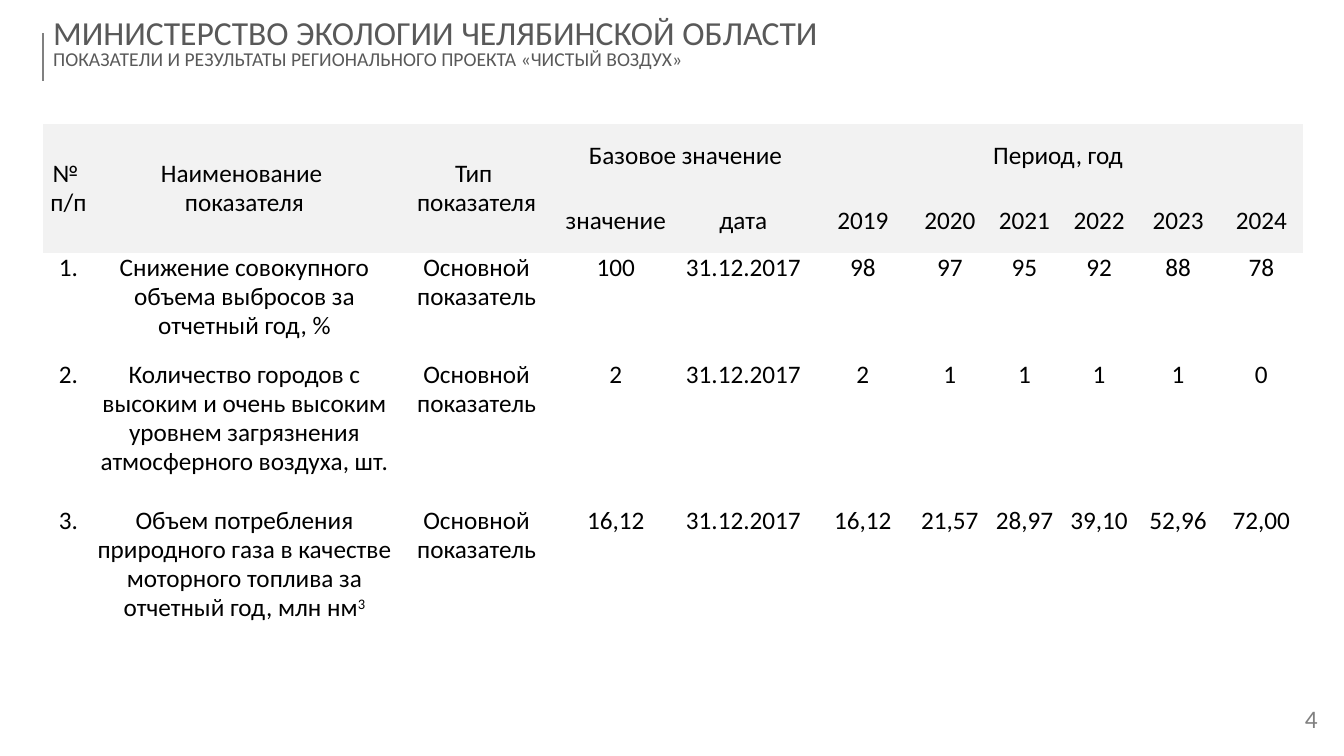
from pptx import Presentation, util as u
from pptx.dml.color import RGBColor
from pptx.enum import shapes, text
from lxml import etree


def rgb(value):
    return RGBColor.from_string(value)


def style(tf, sizes, color, align, spacing):
    for p, size in zip(tf.paragraphs, sizes):
        p.alignment = align
        p.line_spacing = spacing
        for r in p.runs:
            r.font.name = "Calibri"
            r.font.size = u.Pt(size)
            r.font.color.rgb = rgb(color)


CENTER, LEFT = text.PP_ALIGN.CENTER, text.PP_ALIGN.LEFT
MIDDLE, TOP = text.MSO_ANCHOR.MIDDLE, text.MSO_ANCHOR.TOP

prs = Presentation()
prs.slide_width, prs.slide_height = u.Cm(33.87), u.Cm(19.05)
s = prs.slides.add_slide(prs.slide_layouts[6])

rule = s.shapes.add_connector(shapes.MSO_CONNECTOR.STRAIGHT, u.Cm(1.09), u.Cm(0.84), u.Cm(1.09), u.Cm(2.03))
rule.line.color.rgb = rgb("808080")
rule.line.width = u.Pt(1.5)
etree.SubElement(rule._element.spPr, "{http://schemas.openxmlformats.org/drawingml/2006/main}effectLst")

labels = [
    ("МИНИСТЕРСТВО ЭКОЛОГИИ ЧЕЛЯБИНСКОЙ ОБЛАСТИ\n"
     "ПОКАЗАТЕЛИ И РЕЗУЛЬТАТЫ РЕГИОНАЛЬНОГО ПРОЕКТА «ЧИСТЫЙ ВОЗДУХ»",
     (1.09, 0.36, 30.96, 1.7), (24, 14), "595959", LEFT, TOP),
    ("4", (31.57, 17.53, 2.95, 1.27), (18,), "808080", CENTER, MIDDLE),
]
for words, box, sizes, color, align, anchor in labels:
    tf = s.shapes.add_textbox(*[u.Cm(v) for v in box]).text_frame
    tf.word_wrap = True
    tf.vertical_anchor = anchor
    tf.text = words
    style(tf, sizes, color, align, 0.8)

widths = [1.27, 7.6, 4.1, 2.92, 3.51, 2.51, 1.88, 1.88, 1.88, 2.1, 2.1]
heights = [1.63, 1.63, 2.69, 3.68, 3.68]
rows = [
    ["№ \nп/п", "Наименование \nпоказателя", "Тип \nпоказателя", "Базовое значение", "",
     "Период, год", "", "", "", "", ""],
    ["", "", "", "значение", "дата", "2019", "2020", "2021", "2022", "2023", "2024"],
    ["1.", "Снижение совокупного объема выбросов за отчетный год, %", "Основной показатель",
     "100", "31.12.2017", "98", "97", "95", "92", "88", "78"],
    ["2.", "Количество городов с высоким и очень высоким уровнем загрязнения атмосферного воздуха, шт.",
     "Основной показатель", "2", "31.12.2017", "2", "1", "1", "1", "1", "0"],
    ["3.", "Объем потребления природного газа в качестве моторного топлива за отчетный год, млн нм",
     "Основной показатель", "16,12", "31.12.2017", "16,12", "21,57", "28,97", "39,10", "52,96", "72,00"],
]
table = s.shapes.add_table(len(rows), len(widths), u.Cm(1.09), u.Cm(3.12),
                           u.Cm(sum(widths)), u.Cm(sum(heights))).table
table.first_row = table.horz_banding = False
NO_STYLE_NO_GRID = "{2D5ABB26-0587-4C30-8999-92F81FD0307C}"
table._tbl.tblPr[0].text = NO_STYLE_NO_GRID
for column, width in zip(table.columns, widths):
    column.width = u.Cm(width)
for row, height in zip(table.rows, heights):
    row.height = u.Cm(height)

for top, left, bottom, right in [(0, 0, 1, 0), (0, 1, 1, 1), (0, 2, 1, 2), (0, 3, 0, 4), (0, 5, 0, 10)]:
    table.cell(top, left).merge(table.cell(bottom, right))

for i, values in enumerate(rows):
    for j, value in enumerate(values):
        cell = table.cell(i, j)
        cell.margin_left = cell.margin_right = cell.margin_top = cell.margin_bottom = 0
        if i < 2:
            cell.fill.solid()
            cell.fill.fore_color.rgb = rgb("F2F2F2")
            cell.vertical_anchor = MIDDLE
        else:
            cell.fill.background()
            cell.vertical_anchor = TOP
        if cell.is_spanned:
            continue
        tf = cell.text_frame
        tf.text = value
        if value.endswith("млн нм"):
            r = tf.paragraphs[0].add_run()
            r.text = "3"
            r.font._element.set("baseline", "30000")
        style(tf, (18, 18), "000000", CENTER, 0.95)

prs.save("out.pptx")
